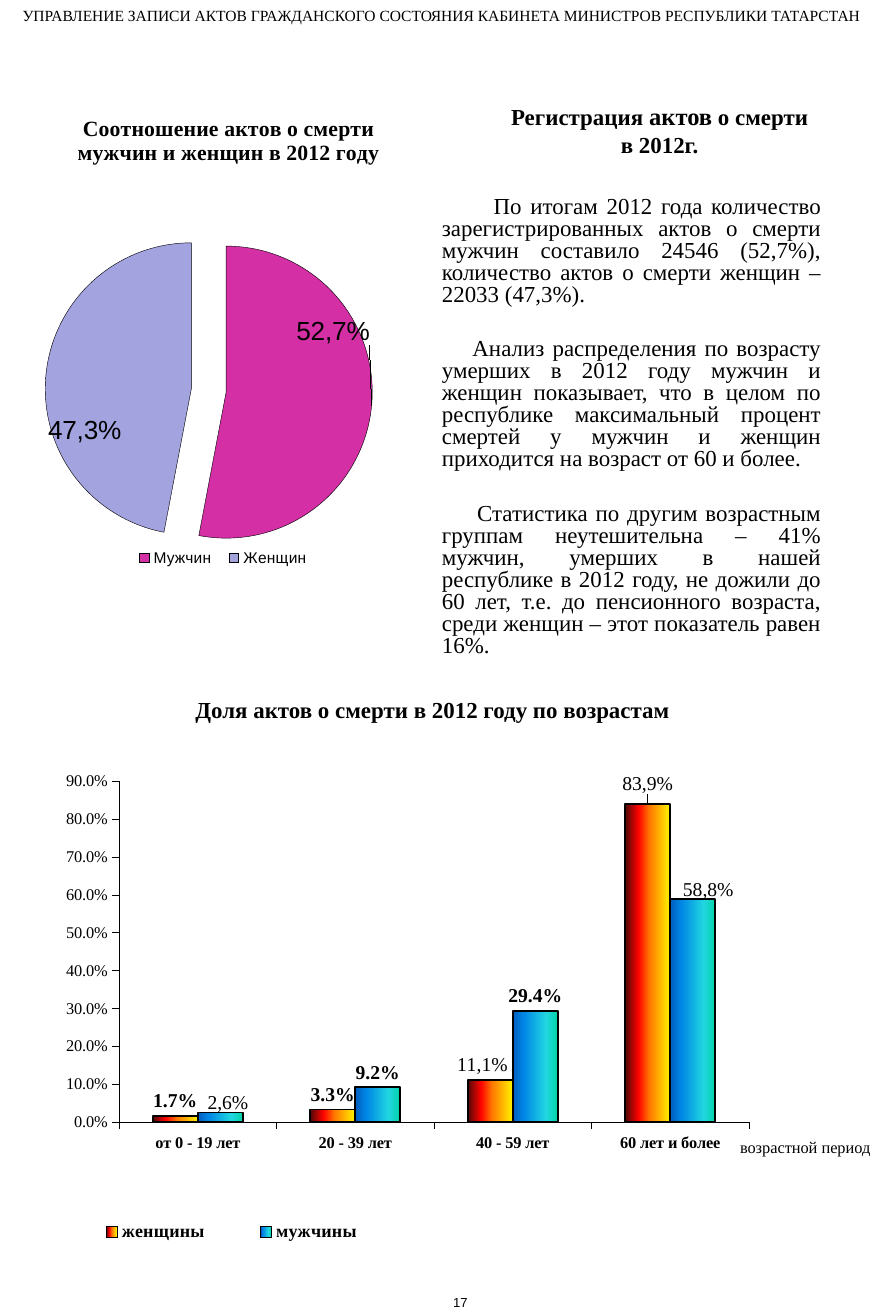
from lxml.etree import SubElement, fromstring
from pptx import Presentation
from pptx.chart.data import CategoryChartData
from pptx.dml.color import RGBColor
from pptx.enum.chart import XL_CHART_TYPE, XL_LABEL_POSITION, XL_LEGEND_POSITION, XL_TICK_MARK
from pptx.enum.text import PP_ALIGN
from pptx.oxml.ns import qn
from pptx.util import Inches, Pt

WIDTH, HEIGHT = Inches(7.5), Inches(11.18)
BLACK = RGBColor(0, 0, 0)
PINK = RGBColor(0xD5, 0x2F, 0xA6)
LILAC = RGBColor(0xA3, 0xA3, 0xE0)
FIRE = [(0, RGBColor(0xFF, 0xF2, 0x00)), (45, RGBColor(0xFF, 0x7A, 0x00)),
        (70, RGBColor(0xFF, 0x03, 0x00)), (100, RGBColor(0x4D, 0x08, 0x08))]
OCEAN = [(0, RGBColor(0x03, 0xD4, 0xA8)), (25, RGBColor(0x21, 0xD6, 0xE0)),
         (75, RGBColor(0x00, 0x87, 0xE6)), (100, RGBColor(0x00, 0x5C, 0xBF))]
SERIF, SANS = "Times New Roman", "Arial"
GRAD = ('<a:gradFill xmlns:a="http://schemas.openxmlformats.org/drawingml/2006/main">'
        '<a:gsLst>{}</a:gsLst><a:lin ang="10800000" scaled="1"/></a:gradFill>')
STOP = '<a:gs pos="{}"><a:srgbClr val="{}"/></a:gs>'

PROSE = [
    (0.44, "По итогам 2012 года количество зарегистрированных актов о смерти мужчин "
           "составило 24546 (52,7%), количество актов о смерти женщин – 22033 (47,3%)."),
    (0.26, "Анализ распределения по возрасту умерших в 2012 году мужчин и женщин "
           "показывает, что в целом по республике максимальный процент смертей у мужчин "
           "и женщин приходится на возраст от 60 и более."),
    (0.3, "Статистика по другим возрастным группам неутешительна – 41% мужчин, умерших "
          "в нашей республике в 2012 году, не дожили до 60 лет, т.е. до пенсионного "
          "возраста, среди женщин – этот показатель равен 16%."),
]


def apply(item, **values):
    for name, value in values.items():
        setattr(item, name, value)


def ink(font, size, name=SERIF, bold=False):
    apply(font, size=Pt(size), name=name, bold=bold)
    font.color.rgb = BLACK


def scale(box):
    x, y, w, h = box
    return [int(part * full / 100) for part, full in zip((x, y, w, h), (WIDTH, HEIGHT) * 2)]


def frame(slide, box, wrap=True):
    text = slide.shapes.add_textbox(*scale(box)).text_frame
    text.word_wrap = wrap
    return text


def write(slide, box, lines, size, name=SERIF, bold=False, wrap=True, **layout):
    text = frame(slide, box, wrap)
    for i, runs in enumerate(lines):
        para = text.paragraphs[0] if i == 0 else text.add_paragraph()
        apply(para, **layout)
        for words, grow in runs:
            run = para.add_run()
            run.text = words
            ink(run.font, size + grow, name, bold)


def prose(slide, box):
    text = frame(slide, box)
    for i, (indent, words) in enumerate(PROSE):
        para = text.paragraphs[0] if i == 0 else text.add_paragraph()
        apply(para, alignment=PP_ALIGN.JUSTIFY, line_spacing=0.8, space_before=Pt(20 if i else 0))
        props = para._p.get_or_add_pPr()
        props.set("marL", str(Inches(0.37)))
        props.set("indent", str(Inches(indent)))
        run = para.add_run()
        run.text = words
        ink(run.font, 14)


def place(part, index, inner=False, fixed=True, **spots):
    for old in part.findall(qn("c:layout")):
        part.remove(old)
    layout = part.makeelement(qn("c:layout"), {})
    part.insert(index, layout)
    manual = SubElement(layout, qn("c:manualLayout"))
    if inner:
        SubElement(manual, qn("c:layoutTarget")).set("val", "inner")
    if fixed:
        for axis in "xy":
            SubElement(manual, qn(f"c:{axis}Mode")).set("val", "edge")
    for key, value in spots.items():
        SubElement(manual, qn(f"c:{key}")).set("val", str(value))


def graph(slide, box, kind, names, rows, spot, key):
    data = CategoryChartData()
    data.categories = names
    for name, values in rows:
        data.add_series(name, values)
    chart = slide.shapes.add_chart(kind, *scale(box), data).chart
    ink(chart.font, 18, SANS)
    chart.has_title = False
    chart.has_legend = True
    apply(chart.legend, position=XL_LEGEND_POSITION.BOTTOM, include_in_layout=False)
    place(chart.legend._element, 1, **key)
    place(chart._chartSpace.chart.plotArea, 0, True, **spot)
    return chart


def edge(line, width):
    line.color.rgb = BLACK
    line.width = Pt(width)


def tag(point, words, size, name, position, x, y):
    label = point.data_label
    run = label.text_frame.paragraphs[0].add_run()
    run.text = words
    ink(run.font, size, name)
    label.position = position
    place(label._get_or_add_dLbl(), 1, fixed=False, x=x, y=y)


def ratio(slide, box):
    chart = graph(slide, box, XL_CHART_TYPE.PIE, ["Мужчин", "Женщин"],
                  [("Series 1", (53, 47))],
                  dict(x=0.16, y=0.23, w=0.68, h=0.66), dict(x=0.33, y=0.87, w=0.4, h=0.05))
    ink(chart.legend.font, 9.5, SANS)
    chart.has_title = True
    title = chart.chart_title
    for i, words in enumerate(["Соотношение актов о смерти", "мужчин и женщин в 2012 году"]):
        para = title.text_frame.paragraphs[0] if i == 0 else title.text_frame.add_paragraph()
        run = para.add_run()
        run.text = words
        ink(run.font, 13.3, SERIF, True)
    place(title._element, 1, x=0.22, y=0)
    chart.plots[0].vary_by_categories = True
    series = chart.plots[0].series[0]
    edge(series.format.line, 0.25)
    props = series._element.find(qn("c:spPr"))
    props.addnext(props.makeelement(qn("c:explosion"), {"val": "12"}))
    apply(series.data_labels, show_percentage=True, show_value=False,
          position=XL_LABEL_POSITION.INSIDE_END)
    ink(series.data_labels.font, 16, SANS)
    looks = [(PINK, "52,7%", 0.01, -0.12), (LILAC, "47,3%", -0.01, 0.08)]
    for i, (color, words, x, y) in enumerate(looks):
        point = series.points[i]
        point.format.fill.solid()
        point.format.fill.fore_color.rgb = color
        edge(point.format.line, 0.25)
        tag(point, words, 16, SANS, XL_LABEL_POSITION.INSIDE_END, x, y)


def ages(slide, box):
    chart = graph(slide, box, XL_CHART_TYPE.COLUMN_CLUSTERED,
                  ["от 0 - 19 лет", "20 - 39 лет", "40 - 59 лет", "60 лет и более"],
                  [("женщины", (0.017, 0.033, 0.111, 0.839)),
                   ("мужчины", (0.026, 0.092, 0.294, 0.588))],
                  dict(x=0.17, y=0.04, w=0.81, h=0.67), dict(x=0.09, y=0.89, w=0.45, h=0.07))
    ink(chart.legend.font, 11, SERIF, True)
    for axis, bold in [(chart.category_axis, True), (chart.value_axis, False)]:
        apply(axis, has_major_gridlines=False, major_tick_mark=XL_TICK_MARK.OUTSIDE)
        ink(axis.tick_labels.font, 10, SERIF, bold)
        edge(axis.format.line, 0.25)
    apply(chart.value_axis, minimum_scale=0, maximum_scale=0.9, major_unit=0.1)
    digits = dict(number_format="0.0%", number_format_is_linked=False)
    apply(chart.value_axis.tick_labels, **digits)
    plot = chart.plots[0]
    apply(plot, gap_width=150, overlap=0, vary_by_categories=False)
    looks = [(FIRE, [(2, "11,1%", -0.01, 0), (3, "83,9%", 0, -0.01)]),
             (OCEAN, [(0, "2,6%", 0.01, 0.01), (3, "58,8%", 0.02, 0.01)])]
    for series, (stops, labels) in zip(plot.series, looks):
        edge(series.format.line, 1)
        fill = GRAD.format("".join(STOP.format(at * 1000, color) for at, color in stops))
        series._element.find(qn("c:spPr")).insert(0, fromstring(fill))
        apply(series.data_labels, show_value=True, position=XL_LABEL_POSITION.OUTSIDE_END, **digits)
        ink(series.data_labels.font, 12, SERIF, True)
        for i, words, x, y in labels:
            tag(series.points[i], words, 12, SERIF, XL_LABEL_POSITION.OUTSIDE_END, x, y)


def main():
    deck = Presentation()
    apply(deck, slide_width=WIDTH, slide_height=HEIGHT)
    slide = deck.slides.add_slide(deck.slide_layouts[6])
    middle = dict(alignment=PP_ALIGN.CENTER)
    tight = dict(middle, line_spacing=0.8, space_before=Pt(3))
    ratio(slide, (-3.6, 8.4, 54.5, 38))
    prose(slide, (43.8, 14.5, 50.5, 36))
    write(slide, (50, 97.9, 5.2, 2.1), [[("17", 0)]], 8, SANS)
    write(slide, (49.7, 7.7, 50, 4.8),
          [[("Регистрация ", 0), ("актов", 1), (" о смерти", 0)], [("в 2012г.", 0)]],
          14, bold=True, **tight)
    write(slide, (0, 0, 100, 2.3),
          [[("УПРАВЛЕНИЕ ЗАПИСИ АКТОВ ГРАЖДАНСКОГО СОСТОЯНИЯ "
             "КАБИНЕТА МИНИСТРОВ РЕСПУБЛИКИ ТАТАРСТАН", 0)]], 9.5, **middle)
    ages(slide, (-1.5, 57.8, 88.1, 38.7))
    write(slide, (19.6, 52.8, 58.8, 2.6),
          [[("Доля актов о смерти в 2012 году по возрастам", 0)]], 14, bold=True, **tight)
    write(slide, (82.5, 86, 17.5, 2.4), [[("возрастной период", 0)]], 10, wrap=False)
    deck.save("out.pptx")


if __name__ == "__main__":
    main()
